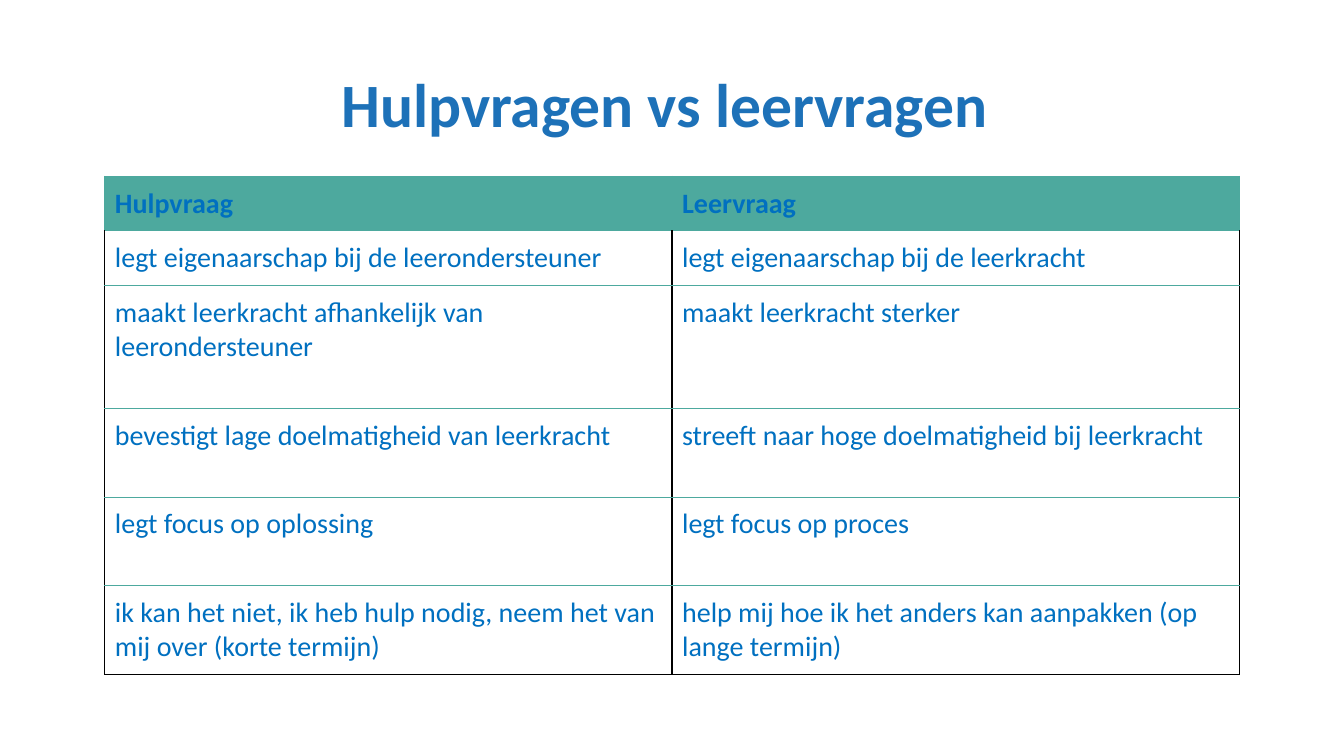
"""Build a slide that compares help questions with learning questions."""
import pptx
import pptx.dml.color
import pptx.enum.text
import pptx.oxml
import pptx.oxml.ns
import pptx.util

COLOURS = {"title": "1D71B8", "text": "0070C0", "teal": "4DA99E",
           "black": "000000", "white": "FFFFFF"}
COMPARISON = [
    ("Hulpvraag", "Leervraag"),
    ("legt eigenaarschap bij de leerondersteuner",
     "legt eigenaarschap bij de leerkracht"),
    ("maakt leerkracht afhankelijk van leerondersteuner",
     "maakt leerkracht sterker"),
    ("bevestigt lage doelmatigheid van leerkracht",
     "streeft naar hoge doelmatigheid bij leerkracht"),
    ("legt focus op oplossing", "legt focus op proces"),
    ("ik kan het niet, ik heb hulp nodig, neem het van mij over (korte termijn)",
     "help mij hoe ik het anders kan aanpakken (op lange termijn)"),
]
ROW_HEIGHTS = [0.54, 0.54, 1.22, 0.88, 0.88, 0.88]


class SlideBuilder:
    def __init__(self, deck):
        self.font = "Calibri"
        self.width, self.height = deck.slide_width, deck.slide_height
        self.page = deck.slides.add_slide(deck.slide_layouts[5])

    def place(self, left, top, width, height):
        return (round(left * self.width), round(top * self.height),
                round(width * self.width), round(height * self.height))

    def colour(self, name):
        return pptx.dml.color.RGBColor.from_string(COLOURS[name])

    def style(self, para, size, colour, bold):
        for span in para.runs:
            span.font.name = self.font
            span.font.size = pptx.util.Pt(size)
            span.font.bold = bold
            span.font.color.rgb = self.colour(colour)

    def title(self, text, area):
        box = self.page.shapes.title
        box.left, box.top, box.width, box.height = self.place(*area)
        frame = box.text_frame
        frame.text = text
        frame.word_wrap = True
        frame.auto_size = pptx.enum.text.MSO_AUTO_SIZE.NONE
        frame.vertical_anchor = pptx.enum.text.MSO_ANCHOR.MIDDLE
        frame.margin_left = frame.margin_right = pptx.util.Inches(0.2)
        frame.margin_top = frame.margin_bottom = pptx.util.Inches(0.2)
        para = frame.paragraphs[0]
        para.alignment = pptx.enum.text.PP_ALIGN.CENTER
        para.line_spacing = 0.9
        self.style(para, 44, "title", True)

    def borders(self, cell, sides):
        properties = cell._tc.get_or_add_tcPr()
        for index, (side, (colour, points)) in enumerate(sides.items()):
            line = pptx.oxml.parse_xml(
                f'<a:ln{side} {pptx.oxml.ns.nsdecls("a")} w="{pptx.util.Pt(points)}">'
                f'<a:solidFill><a:srgbClr val="{COLOURS[colour]}"/></a:solidFill>'
                f'</a:ln{side}>')
            properties.insert(index, line)

    def table(self, rows, heights, area):
        frame = self.page.shapes.add_table(len(rows), len(rows[0]), *self.place(*area))
        table = frame.table
        table.horz_banding = False
        thin, edge = ("teal", 0.75), ("black", 1)
        for row_index, (texts, height) in enumerate(zip(rows, heights)):
            table.rows[row_index].height = pptx.util.Inches(height)
            header = row_index == 0
            side = thin if header else edge
            bottom = edge if row_index == len(rows) - 1 else thin
            for column_index, text in enumerate(texts):
                cell = table.cell(row_index, column_index)
                cell.text = text
                cell.margin_left = cell.margin_right = pptx.util.Inches(0.1)
                cell.margin_top = cell.margin_bottom = pptx.util.Inches(0.1)
                cell.fill.solid()
                cell.fill.fore_color.rgb = self.colour("teal" if header else "white")
                self.borders(cell, {"L": side, "R": side, "T": thin, "B": bottom})
                self.style(cell.text_frame.paragraphs[0], 20, "text", header)


def main():
    deck = pptx.Presentation()
    deck.slide_width = pptx.util.Inches(13.33)
    deck.slide_height = pptx.util.Inches(7.5)
    builder = SlideBuilder(deck)
    builder.title("Hulpvragen vs leervragen ", (2.44 / 13.33, 0.42 / 7.5, 8.45 / 13.33, 1.3 / 7.5))
    builder.table(COMPARISON, ROW_HEIGHTS,
                  (1.04 / 13.33, 1.75 / 7.5, 11.25 / 13.33, sum(ROW_HEIGHTS) / 7.5))
    deck.save("out.pptx")


if __name__ == "__main__":
    main()
